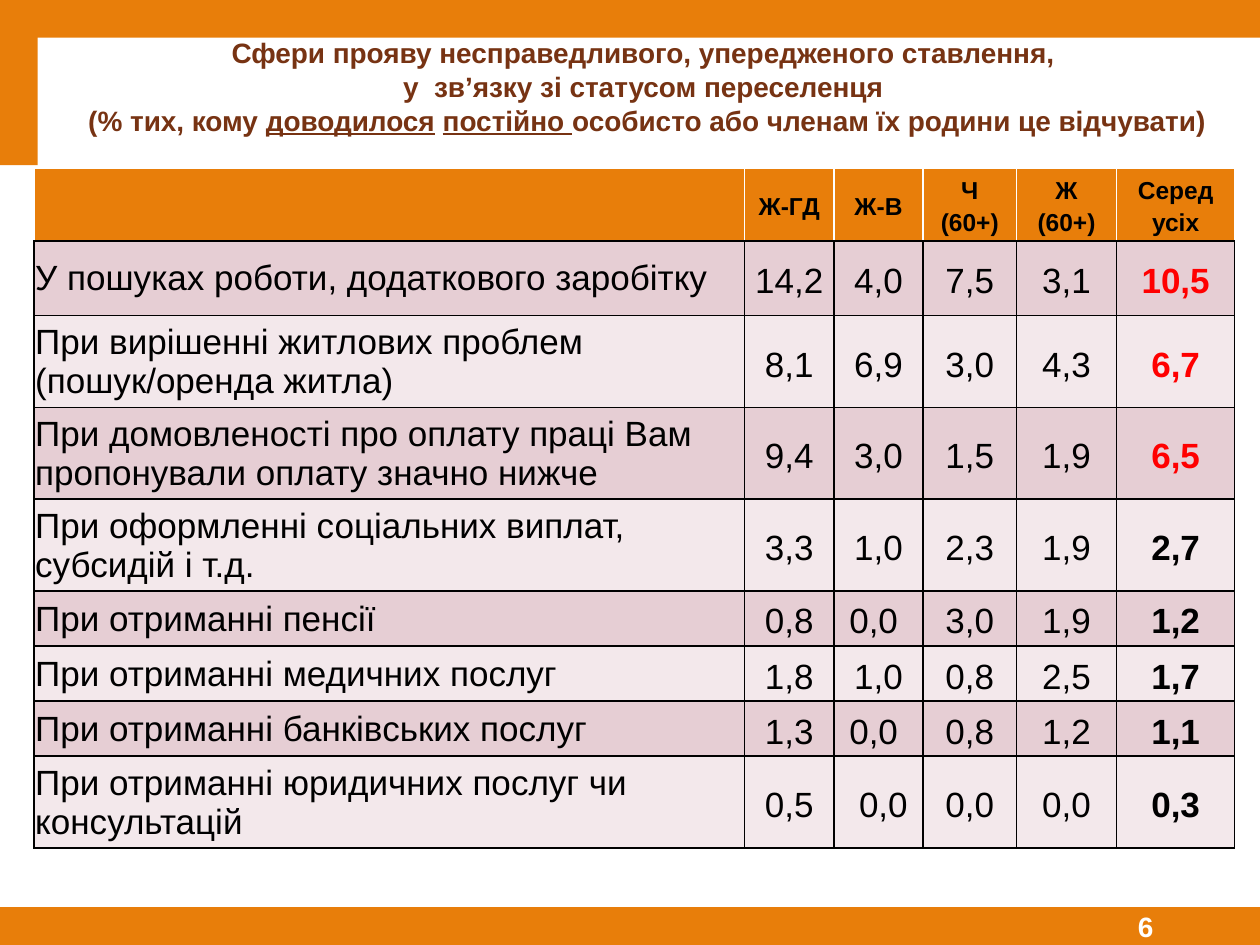
"""Build the slide on where displaced people meet unfair treatment."""
from lxml import etree
from pptx import Presentation
from pptx.dml.color import RGBColor
from pptx.enum.shapes import MSO_SHAPE
from pptx.enum.text import MSO_ANCHOR, MSO_AUTO_SIZE, PP_ALIGN
from pptx.oxml.ns import qn
from pptx.util import Cm, Pt

RECT = MSO_SHAPE.RECTANGLE
MID = MSO_ANCHOR.MIDDLE
FIXED = MSO_AUTO_SIZE.NONE
LEFT, CENTER, RIGHT = PP_ALIGN.LEFT, PP_ALIGN.CENTER, PP_ALIGN.RIGHT

ORANGE, BLACK, WHITE, RED = "E87E0A", "000000", "FFFFFF", "FF0000"
BANDS = ["E6CED4", "F3E8EB"]


def hue(code):
    """Turn a hex string into a colour."""
    return RGBColor.from_string(code)


def write(para, text, color, **form):
    """Add a run of text with the given font values."""
    run = para.add_run()
    run.text = text
    run.font.color.rgb = hue(color)
    for name, value in {"name": "Arial", "bold": True, **form}.items():
        setattr(run.font, name, value)


deck = Presentation()
deck.slide_width, deck.slide_height = Cm(25.4), Cm(19.05)
slide = deck.slides.add_slide(deck.slide_layouts[5])

bars = [
    (0, 18.29, 4.65, 0.76),
    (4.34, 18.29, 16.66, 0.76),
    (0, 0, 25.4, 0.76),
    (0, 0.74, 0.76, 2.59),
    (20.78, 18.29, 4.62, 0.76),
]
for box in bars:
    bar = slide.shapes.add_shape(RECT, *map(Cm, box))
    bar.shadow.inherit = False
    bar.fill.solid()
    bar.fill.fore_color.rgb = hue(ORANGE)
    bar.line.fill.background()

frame = bar.text_frame
form = {"vertical_anchor": MID, "margin_right": Cm(2.15),
        "margin_top": 0, "margin_bottom": 0}
for name, value in form.items():
    setattr(frame, name, value)
para = frame.paragraphs[0]
para.alignment = RIGHT
write(para, "6", WHITE, size=Pt(16))

title = slide.shapes.title
form = {"left": Cm(0.38), "top": Cm(0.76), "width": Cm(25.02), "height": Cm(1.96)}
for name, value in form.items():
    setattr(title, name, value)
frame = title.text_frame
form = {"vertical_anchor": MID, "auto_size": FIXED, "word_wrap": True,
        "margin_left": Cm(0.56), "margin_right": Cm(0.25),
        "margin_top": Cm(0.13), "margin_bottom": Cm(0.13)}
for name, value in form.items():
    setattr(frame, name, value)
para = frame.paragraphs[0]
para.alignment = CENTER
lines = [
    [("Сфери прояву несправедливого, упередженого ставлення, ", False)],
    [("у  зв’язку зі статусом переселенця ", False)],
    [("(% тих, кому ", False), ("доводилося", True), (" ", False),
     ("постійно ", True), ("особисто або членам їх родини це відчувати)", False)],
]
for row, line in enumerate(lines):
    if row:
        para.add_line_break()
    for text, under in line:
        write(para, text, "773313", size=Pt(16), underline=under)

data = [
    ["", "Ж-ГД", "Ж-В", "Ч (60+)", "Ж (60+)", "Серед усіх"],
    ["У пошуках роботи, додаткового заробітку", "14,2", "4,0", "7,5", "3,1", "10,5"],
    ["При вирішенні житлових проблем (пошук/оренда житла)",
     "8,1", "6,9", "3,0", "4,3", "6,7"],
    ["При домовленості про оплату праці Вам пропонували оплату значно нижче",
     "9,4", "3,0", "1,5", "1,9", "6,5"],
    ["При оформленні соціальних виплат, субсидій і т.д.",
     "3,3", "1,0", "2,3", "1,9", "2,7"],
    ["При отриманні пенсії", "0,8", "0,0 ", "3,0", "1,9", "1,2"],
    ["При отриманні медичних послуг", "1,8", "1,0", "0,8", "2,5", "1,7"],
    ["При отриманні банківських послуг", "1,3", "0,0 ", "0,8", "1,2", "1,1"],
    ["При отриманні юридичних послуг чи консультацій",
     "0,5", " 0,0", "0,0", "0,0", "0,3"],
]
widths = [14.32, 1.8, 1.8, 1.88, 2.02, 2.38]
heights = [1.46, 1.5, 1.85, 1.85, 1.85, 1.11, 1.11, 1.11, 1.85]
place = map(Cm, (0.69, 3.4, sum(widths), sum(heights)))
table = slide.shapes.add_table(len(heights), len(widths), *place).table
for col, width in zip(table.columns, widths):
    col.width = Cm(width)
for row, height in zip(table.rows, heights):
    row.height = Cm(height)

for row, items in enumerate(data):
    head = row == 0
    for col, text in enumerate(items):
        cell = table.cell(row, col)
        props = cell._tc.get_or_add_tcPr()
        for side in ("lnL", "lnR", "lnT", "lnB"):
            edge = etree.SubElement(props, qn(f"a:{side}"), w=str(Pt(1)))
            fill = etree.SubElement(edge, qn("a:solidFill"))
            tint = WHITE if head and side != "lnB" else BLACK
            etree.SubElement(fill, qn("a:srgbClr"), val=tint)
        cell.fill.solid()
        cell.fill.fore_color.rgb = hue(ORANGE if head else BANDS[(row - 1) % 2])
        inset = Cm(0.18 if head else 0.02)
        form = {"vertical_anchor": MID, "margin_left": inset, "margin_right": inset,
                "margin_top": Cm(0 if head else 0.02), "margin_bottom": 0}
        for name, value in form.items():
            setattr(cell, name, value)
        if not text:
            continue
        para = cell.text_frame.paragraphs[0]
        para.alignment = CENTER if col else LEFT
        para.line_spacing = 1.15 if col else 1.0
        last = col == len(items) - 1
        color = RED if last and 1 <= row <= 3 else BLACK
        write(para, text, color, size=Pt(14 if head else 20), bold=head or last)

deck.save("out.pptx")
